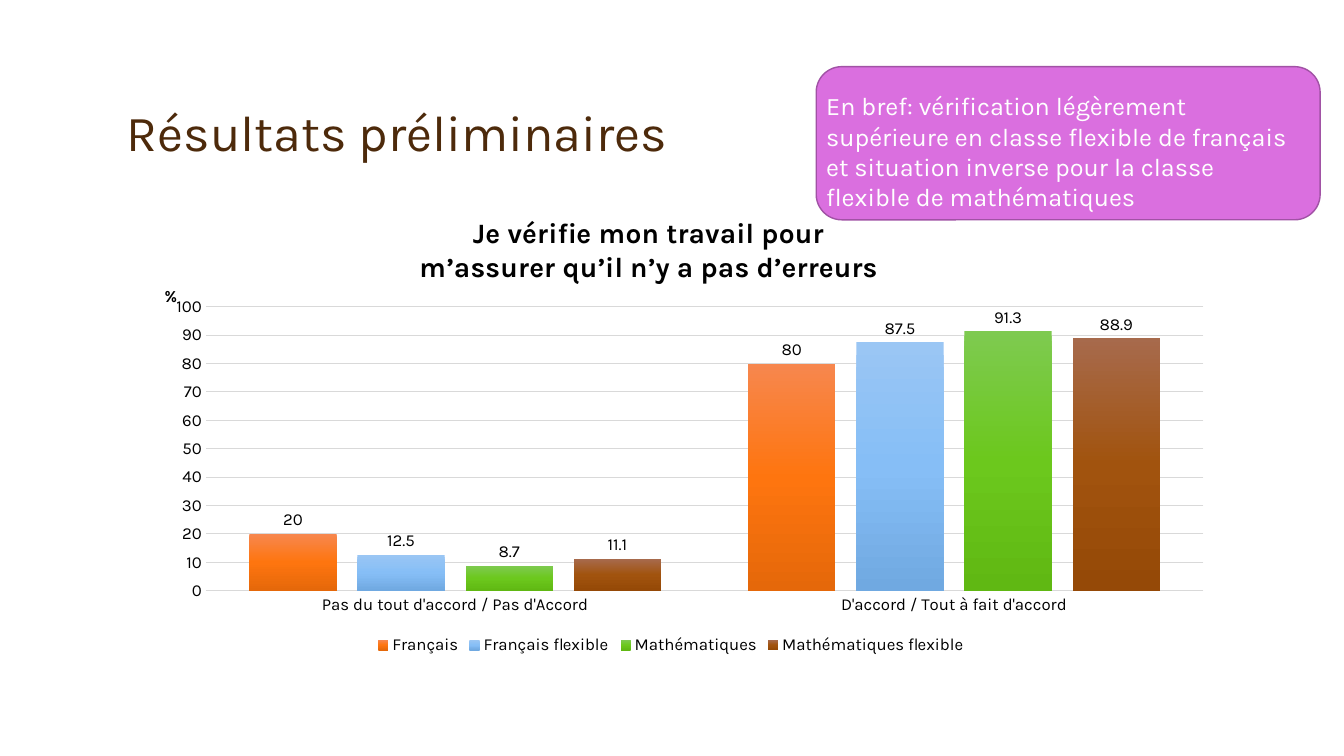
from copy import deepcopy

from lxml import etree
from pptx import Presentation
from pptx import util as u
from pptx.chart import data
from pptx.dml import color
from pptx.enum import chart as ch, shapes, text
from pptx.oxml import ns

FONT = "Karla"
CATS = ["Pas du tout d'accord / Pas d'Accord", "D'accord / Tout à fait d'accord"]
# Name, values, gradient from top to bottom
ROWS = [
    ("Français", (20, 80), ("F7874E", "FE750F", "E5680A")),
    ("Français flexible", (12.5, 87.5), ("9AC6F4", "86BEF6", "70A9E1")),
    ("Mathématiques", (8.7, 91.3), ("7ECA50", "6CC81D", "60B813")),
    ("Mathématiques flexible", (11.1, 88.9), ("A76A4C", "A1530E", "954907")),
]


def rgb(code):
    return color.RGBColor.from_string(code)


def style(font, size, code="000000", bold=False):
    font.name, font.size, font.bold = FONT, u.Pt(size), bold
    font.color.rgb = rgb(code)


def rule(line, code, width=0.75):
    line.color.rgb = rgb(code)
    line.width = u.Pt(width)


def label(slide, box, words, size, code):
    frame = slide.shapes.add_textbox(*map(u.Cm, box)).text_frame
    frame.word_wrap = True
    frame.text = words
    style(frame.paragraphs[0].runs[0].font, size, code)
    return frame


def place(part, spot, **place_at):
    """Fix the place of a chart part, in fractions of the chart."""
    lay = part.find(ns.qn("c:layout"))
    if lay is None:
        lay = etree.Element(ns.qn("c:layout"))
        part.insert(spot, lay)
    man = etree.SubElement(lay, ns.qn("c:manualLayout"))
    if "w" in place_at:
        etree.SubElement(man, ns.qn("c:layoutTarget")).set("val", "inner")
    for key in ("x", "y"):
        etree.SubElement(man, ns.qn(f"c:{key}Mode")).set("val", "edge")
    for key, val in place_at.items():
        etree.SubElement(man, ns.qn(f"c:{key}")).set("val", str(val))


def caption(title, words, size, x, y):
    frame = title.text_frame
    frame.text = words
    for para in frame.paragraphs:
        style(para.runs[0].font, size, bold=True)
    frame._txBody.bodyPr.set("rot", "0")
    place(title._element, 1, x=x, y=y)


def shade(bar, codes):
    fill = bar.format.fill
    fill.gradient()
    fill.gradient_angle = 270
    stops = bar._element.find(".//" + ns.qn("a:gsLst"))
    stops.insert(1, deepcopy(stops[0]))
    for stop, pos, code in zip(fill.gradient_stops, (0, 0.5, 1), codes):
        stop.position = pos
        stop.color.rgb = rgb(code)


def heading(slide, box):
    frame = label(slide, box, "Résultats préliminaires", 36, "4D2A0B")
    frame.vertical_anchor = text.MSO_ANCHOR.BOTTOM
    frame.paragraphs[0].line_spacing = 0.9


def graph(slide, box):
    table = data.CategoryChartData()
    table.categories = CATS
    for name, vals, _ in ROWS:
        table.add_series(name, vals)
    chart = slide.shapes.add_chart(
        ch.XL_CHART_TYPE.COLUMN_CLUSTERED, *map(u.Cm, box), table).chart
    style(chart.font, 12)

    # Titles and plot area
    caption(chart.chart_title,
            "Je vérifie mon travail pour\nm’assurer qu’il n’y a pas d’erreurs",
            20, 0.27, 0.04)
    axis = chart.value_axis
    caption(axis.axis_title, "%", 12, 0.04, 0.19)
    area = chart._chartSpace.find(".//" + ns.qn("c:plotArea"))
    place(area, 0, x=0.08, y=0.243, w=0.9, h=0.61)

    # Axes
    axis.minimum_scale, axis.maximum_scale, axis.major_unit = 0, 100, 10
    axis.format.line.fill.background()
    rule(axis.major_gridlines.format.line, "D9D9D9")
    rule(chart.category_axis.format.line, "D9D9D9")
    for part in (axis, chart.category_axis):
        part.major_tick_mark = ch.XL_TICK_MARK.NONE
        style(part.tick_labels.font, 12)

    # Bars
    plot = chart.plots[0]
    plot.gap_width, plot.overlap = 100, -24
    plot.vary_by_categories = False
    for bar, (_, _, codes) in zip(plot.series, ROWS):
        shade(bar, codes)
        tags = bar.data_labels
        tags.show_value = True
        tags.position = ch.XL_LABEL_POSITION.OUTSIDE_END
        style(tags.font, 12)

    # Legend
    chart.has_legend = True
    chart.legend.position = ch.XL_LEGEND_POSITION.BOTTOM
    chart.legend.include_in_layout = False
    style(chart.legend.font, 12)


def callout(slide, box):
    left, top, width, height = box
    card = slide.shapes.add_shape(
        shapes.MSO_SHAPE.ROUNDED_RECTANGLE, *map(u.Cm, box))
    card.shadow.inherit = False
    card.fill.solid()
    card.fill.fore_color.rgb = rgb("DA6FDF")
    rule(card.line, "A152A5", 1)
    label(slide, (left, top + 0.48, width - 0.25, height - 0.53),
          "En bref: vérification légèrement supérieure en classe flexible de "
          "français et situation inverse pour la classe flexible de "
          "mathématiques", 18, "FFFFFF")


def main():
    deck = Presentation()
    deck.slide_width, deck.slide_height = u.Cm(33.87), u.Cm(19.05)
    slide = deck.slides.add_slide(deck.slide_layouts[6])
    heading(slide, (2.95, 0.84, 27.94, 3.38))
    graph(slide, (2.95, 4.88, 27.94, 11.73))
    callout(slide, (20.57, 1.68, 12.7, 3.86))
    deck.save("out.pptx")


if __name__ == "__main__":
    main()
